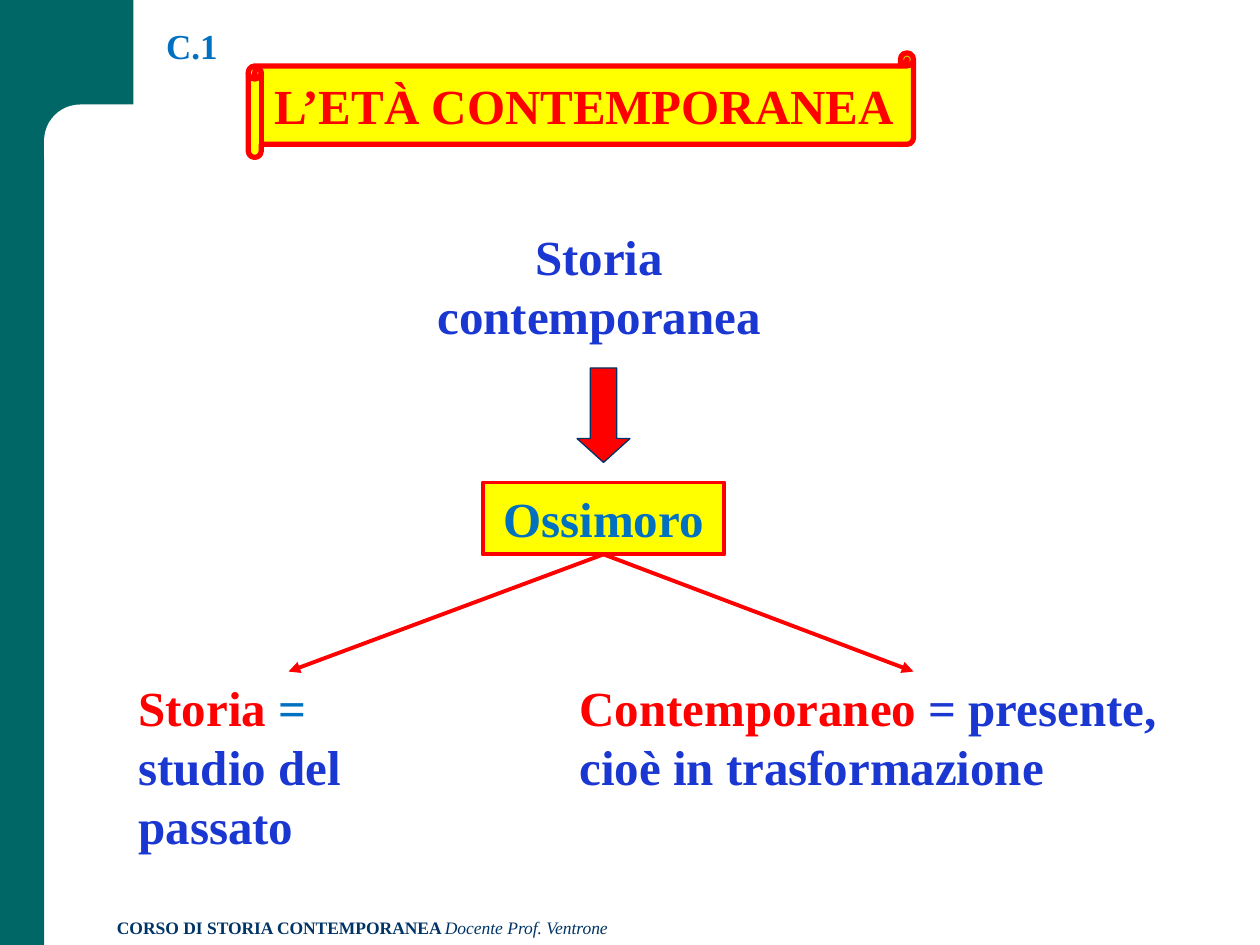
from dataclasses import dataclass

from lxml import etree
from pptx import Presentation
from pptx.dml.color import RGBColor
from pptx.enum.shapes import MSO_CONNECTOR as Connector, MSO_SHAPE as Shape
from pptx.enum.text import MSO_ANCHOR as Anchor, PP_ALIGN as Align
from pptx.oxml.ns import qn
from pptx.util import Inches, Pt


@dataclass(frozen=True)
class Theme:
    """Colours, font and type sizes of the slide."""
    font: str = "Times New Roman"
    teal: str = "006666"
    navy: str = "003366"
    blue: str = "0070C0"
    royal: str = "1B37D1"
    red: str = "FF0000"
    yellow: str = "FFFF00"
    white: str = "FFFFFF"
    body: int = 28
    label: int = 20
    footer: int = 10


THEME = Theme()


def add_block(page, kind, at, fill, line=None, width=0, adjust=()):
    """Add a filled preset shape with an optional outline."""
    block = page.shapes.add_shape(kind, *map(Inches, at))
    block.shadow.inherit = False
    block.fill.solid()
    block.fill.fore_color.rgb = RGBColor.from_string(fill)
    if line:
        block.line.color.rgb = RGBColor.from_string(line)
        block.line.width = Pt(width)
    else:
        block.line.fill.background()
    for index, value in enumerate(adjust):
        block.adjustments[index] = value
    return block


def write(box, spans, size=THEME.body, align=Align.LEFT, anchor=Anchor.TOP, wrap=True):
    """Fill a shape with one paragraph of (text, colour, italic) spans."""
    frame = box.text_frame
    frame.word_wrap = wrap
    frame.vertical_anchor = anchor
    para = frame.paragraphs[0]
    para.alignment = align
    for text, colour, italic in spans:
        span = para.add_run()
        span.text = text
        span.font.name = THEME.font
        span.font.size = Pt(size)
        span.font.bold = not italic
        span.font.italic = italic
        span.font.color.rgb = RGBColor.from_string(colour)
    return para


def add_text(page, at, spans, **style):
    """Add a text box and return it with its paragraph."""
    box = page.shapes.add_textbox(*map(Inches, at))
    return box, write(box, spans, **style)


def add_arrow(page, source, target):
    """Join the bottom of one box to the top of another with an arrow."""
    arrow = page.shapes.add_connector(Connector.STRAIGHT, 0, 0, 0, 0)
    arrow.begin_connect(source, 2)
    arrow.end_connect(target, 0)
    arrow.line.color.rgb = RGBColor.from_string(THEME.red)
    arrow.line.width = Pt(2.25)
    etree.SubElement(arrow.line._get_or_add_ln(), qn("a:tailEnd"), type="triangle")
    etree.SubElement(arrow._element.spPr, qn("a:effectLst"))


def add_frame(page):
    """Draw the teal corner and the course footer."""
    add_block(page, Shape.RECTANGLE, (0, 0, 0.35, 7.5), THEME.teal)
    add_block(page, Shape.RECTANGLE, (0, 0, 1.06, 1.17), THEME.teal)
    add_block(page, Shape.ROUNDED_RECTANGLE, (0.35, 0.83, 6.06, 0.67), THEME.white, adjust=[0.43])
    add_text(page, (0.83, 7.23, 6.17, 0.27), [
        ("CORSO DI STORIA CONTEMPORANEA ", THEME.navy, False),
        ("Docente Prof. Ventrone", THEME.navy, True),
    ], size=THEME.footer)


def add_heading(page):
    """Add the slide label and the scroll with the title."""
    _, para = add_text(page, (1.22, 0, 0.75, 0.58), [("C.1", THEME.blue, False)],
                       size=THEME.label, anchor=Anchor.BOTTOM)
    para.line_spacing = 0.9
    scroll = add_block(page, Shape.HORIZONTAL_SCROLL, (1.97, 0.42, 5.28, 0.83),
                       THEME.yellow, THEME.red, 3, [0.125])
    write(scroll, [("L’ETÀ CONTEMPORANEA", THEME.red, False)],
          align=Align.CENTER, anchor=Anchor.MIDDLE, wrap=False)


def add_diagram(page):
    """Lead from the phrase to the oxymoron and its two meanings."""
    add_text(page, (3.17, 1.75, 3.17, 1.04),
             [("Storia contemporanea", THEME.royal, False)], align=Align.CENTER)
    add_block(page, Shape.DOWN_ARROW, (4.58, 2.92, 0.42, 0.75),
              THEME.red, THEME.navy, 0.75, [0.5, 0.45])
    oxymoron = add_block(page, Shape.RECTANGLE, (3.83, 3.83, 1.92, 0.57),
                         THEME.yellow, THEME.red, 2.25)
    write(oxymoron, [("Ossimoro", THEME.blue, False)], align=Align.CENTER)
    history, _ = add_text(page, (1, 5.33, 2.58, 1.51), [
        ("Storia", THEME.red, False),
        (" = ", THEME.blue, False),
        ("studio del passato", THEME.royal, False),
    ])
    present, _ = add_text(page, (4.5, 5.33, 5.5, 1.04), [
        ("Contemporaneo ", THEME.red, False),
        ("= presente, cioè in trasformazione", THEME.royal, False),
    ])
    for meaning in (history, present):
        add_arrow(page, oxymoron, meaning)


def main():
    """Build the slide and save it."""
    deck = Presentation()
    deck.slide_width, deck.slide_height = Inches(10), Inches(7.5)
    page = deck.slides.add_slide(deck.slide_layouts[6])
    add_frame(page)
    add_heading(page)
    add_diagram(page)
    deck.save("out.pptx")


if __name__ == "__main__":
    main()
